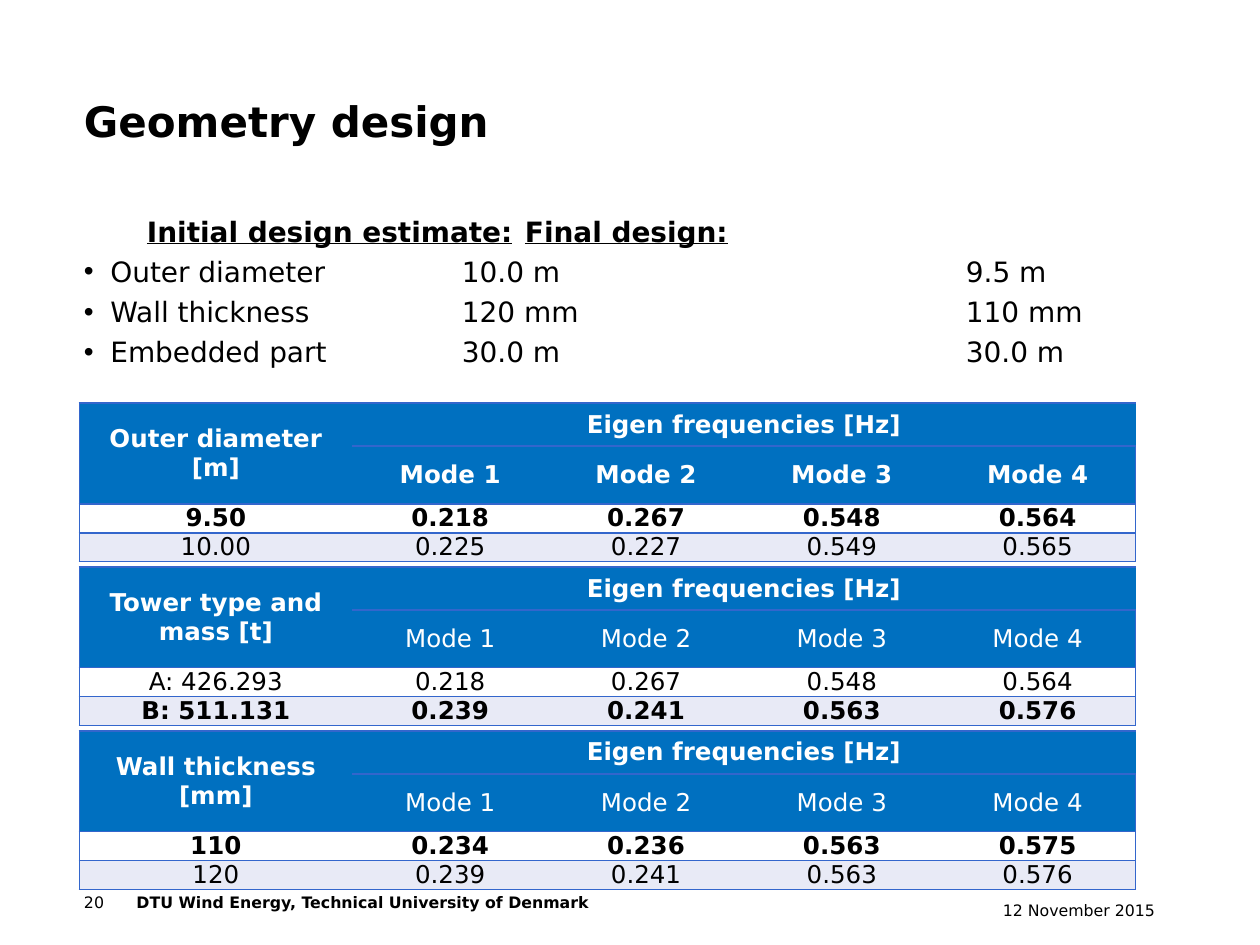
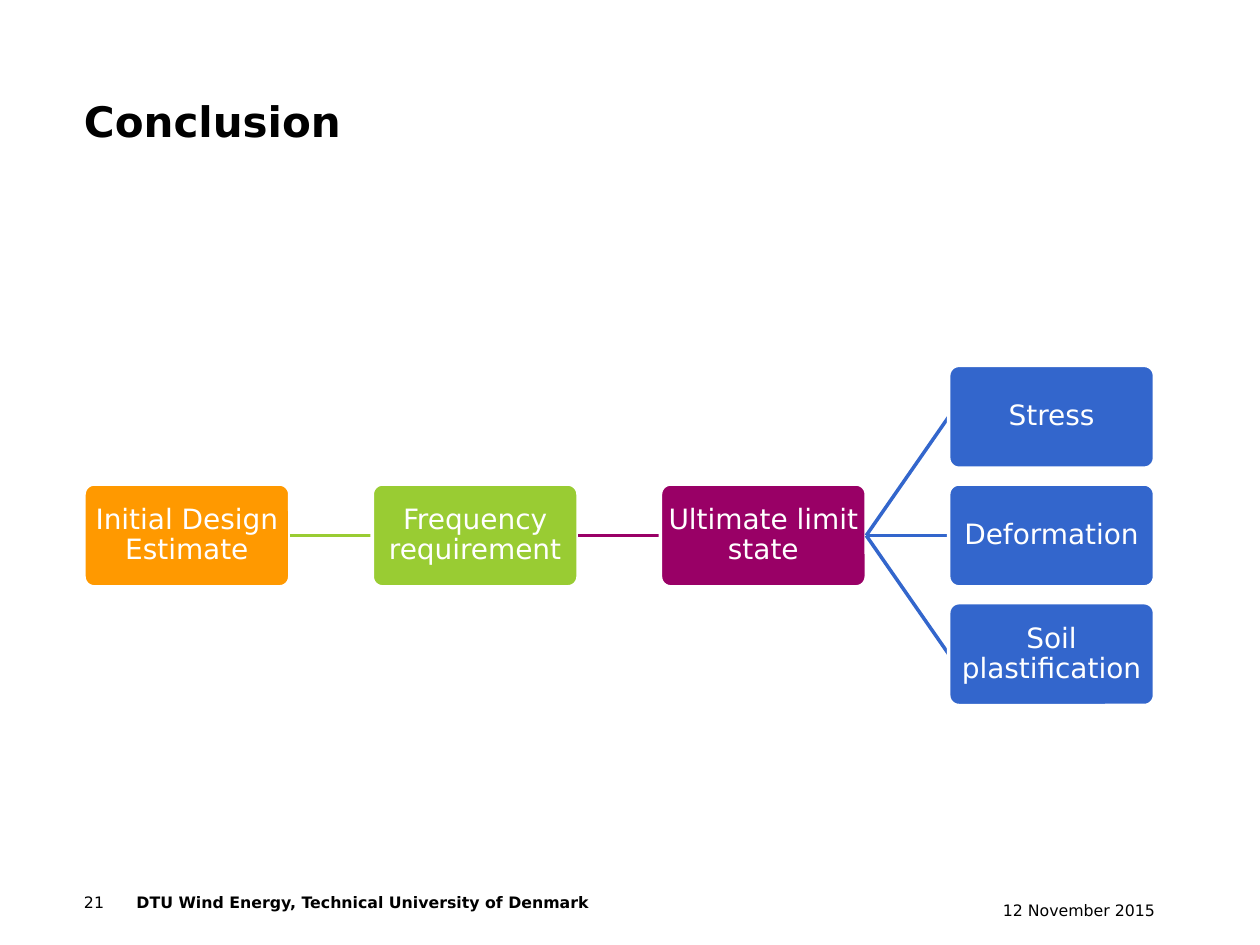
import pptx
import pptx.util
import pptx.dml.color
import pptx.enum.shapes
import pptx.enum.text
import pptx.oxml
import pptx.oxml.ns
from lxml import etree

COLORS = {"black": "000000", "white": "FFFFFF", "header": "0070C0", "band": "E8EAF6",
          "blue": "3366CC", "orange": "FF9900", "green": "99CC33", "purple": "990066"}
FONT = "DejaVu Sans"
ALIGN = pptx.enum.text.PP_ALIGN
ANCHOR = pptx.enum.text.MSO_ANCHOR
SHAPE = pptx.enum.shapes.MSO_SHAPE
Pt = pptx.util.Pt
qn = pptx.oxml.ns.qn

deck = pptx.Presentation()
deck.slide_width, deck.slide_height = pptx.util.Inches(10), pptx.util.Inches(7.5)
UNIT = deck.slide_width // 120  # the slide is a grid of 120 columns and 90 rows


def grid(*cells):
    return [pptx.util.Emu(round(cell * UNIT)) for cell in cells]


def style(frame, size, color="black", bold=False, align=ALIGN.LEFT, anchor=ANCHOR.TOP, inset=0):
    """Format every run of a text frame and lay the text out inside its box."""
    frame.word_wrap = True
    frame.auto_size = pptx.enum.text.MSO_AUTO_SIZE.NONE
    frame.vertical_anchor = anchor
    frame.margin_left = frame.margin_right = frame.margin_top = frame.margin_bottom = Pt(inset)
    for paragraph in frame.paragraphs:
        paragraph.alignment = align
        for span in paragraph.runs:
            span.font.name, span.font.size, span.font.bold = FONT, Pt(size), bold
            span.font.color.rgb = pptx.dml.color.RGBColor.from_string(COLORS[color])


# Title and footer of both slides
LEFT, WIDTH = 8, 102
pages = []
for number, layout, heading in [(20, 1, "Geometry design"), (21, 5, "Conclusion")]:
    page = deck.slides.add_slide(deck.slide_layouts[layout])
    pages.append(page)
    title = page.shapes.title
    title.left, title.top, title.width, title.height = grid(LEFT, 4, WIDTH, 15)
    title.text_frame.text = heading
    style(title.text_frame, 24, bold=True, anchor=ANCHOR.MIDDLE)
    for text, place, bold, align in [
        ("DTU Wind Energy, Technical University of Denmark", (13, 85, 55.5, 4), True, ALIGN.LEFT),
        (str(number), (LEFT, 85, 4, 4), False, ALIGN.LEFT),
        ("12 November 2015", (93, 85.8, 17, 3), False, ALIGN.RIGHT),
    ]:
        box = page.shapes.add_textbox(*grid(*place))
        box.text_frame.text = text
        style(box.text_frame, 9, bold=bold, align=align)
geometry, conclusion = pages

# Design values, lined up with tab stops
body = geometry.placeholders[1]
body.left, body.top, body.width, body.height = grid(LEFT, 20.4, WIDTH, 60)
design_rows = [
    ["", "Initial design estimate:", "Final design:"],
    ["Outer diameter", "10.0 m", "9.5 m"],
    ["Wall thickness", "120 mm", "110 mm"],
    ["Embedded part", "30.0 m", "30.0 m"],
]
body.text_frame.text = "\n".join("\t".join(row) for row in design_rows)
for index, paragraph in enumerate(body.text_frame.paragraphs):
    is_heading = index == 0
    hang = grid(0 if is_heading else 2.52)[0]
    properties = paragraph._p.get_or_add_pPr()
    properties.set("marL", str(hang))
    properties.set("indent", str(-hang))
    if is_heading:
        etree.SubElement(properties, qn("a:buNone"))
    else:
        etree.SubElement(properties, qn("a:buChar"), char="•")
    tabs = etree.SubElement(properties, qn("a:tabLst"))
    for stop in grid(*((19.4, 72) if is_heading else (36, 84))):
        etree.SubElement(tabs, qn("a:tab"), pos=str(stop), algn="l")
    paragraph.space_before = Pt(0 if is_heading else 3.8)
first = body.text_frame.paragraphs[0]
first.text = ""
for text in ("\t", design_rows[0][1], "\t", design_rows[0][2]):
    first.add_run().text = text
style(body.text_frame, 16)
for span in first.runs[1::2]:
    span.font.bold = span.font.underline = True

# Eigen frequency tables
MODES = [f"Mode {mode}" for mode in range(1, 5)]
COLUMN_WIDTHS = [26] + [18.65] * 4
ROW_HEIGHTS = [4.1, 5.5, 2.75, 2.75]
ROW_FILLS = ["header", "header", "white", "band"]
frequency_tables = [
    ("Outer diameter [m]", [True, True, True, False],
     ["9.50", "0.218", "0.267", "0.548", "0.564"],
     ["10.00", "0.225", "0.227", "0.549", "0.565"]),
    ("Tower type and mass [t]", [True, False, False, True],
     ["A: 426.293", "0.218", "0.267", "0.548", "0.564"],
     ["B: 511.131", "0.239", "0.241", "0.563", "0.576"]),
    ("Wall thickness [mm]", [True, False, True, False],
     ["110", "0.234", "0.236", "0.563", "0.575"],
     ["120", "0.239", "0.241", "0.563", "0.576"]),
]
for index, (parameter, bold_rows, *values) in enumerate(frequency_tables):
    place = grid(7.56, 38.4 + 15.6 * index, sum(COLUMN_WIDTHS), sum(ROW_HEIGHTS))
    table = geometry.shapes.add_table(4, 5, *place).table
    for column, width in zip(table.columns, grid(*COLUMN_WIDTHS)):
        column.width = width
    for row, height in zip(table.rows, grid(*ROW_HEIGHTS)):
        row.height = height
    table.cell(0, 0).merge(table.cell(1, 0))
    table.cell(0, 1).merge(table.cell(0, 4))
    texts = [[parameter, "Eigen frequencies [Hz]", "", "", ""], ["", *MODES], *values]
    for r, row in enumerate(texts):
        for c, text in enumerate(row):
            cell = table.cell(r, c)
            properties = cell._tc.get_or_add_tcPr()
            sides = {"L": c == 0, "R": c == 4, "T": (r, c) != (1, 0), "B": (r, c) != (0, 0)}
            for side, visible in sides.items():
                border = etree.SubElement(properties, qn(f"a:ln{side}"), w=str(Pt(1)))
                if visible:
                    fill = etree.SubElement(border, qn("a:solidFill"))
                    etree.SubElement(fill, qn("a:srgbClr"), val=COLORS["blue"])
                else:
                    etree.SubElement(border, qn("a:noFill"))
            cell.fill.solid()
            cell.fill.fore_color.rgb = pptx.dml.color.RGBColor.from_string(COLORS[ROW_FILLS[r]])
            cell.margin_left = cell.margin_right = Pt(5)
            cell.margin_top = cell.margin_bottom = 0
            cell.vertical_anchor = ANCHOR.MIDDLE
            if text:
                cell.text_frame.text = text
                paragraph = cell.text_frame.paragraphs[0]
                paragraph.alignment = ALIGN.CENTER
                font = paragraph.runs[0].font
                font.name, font.size, font.bold = FONT, Pt(14), bold_rows[r]
                color = COLORS["white" if r < 2 else "black"]
                font.color.rgb = pptx.dml.color.RGBColor.from_string(color)

# Design steps: text, column, row, colour, preceding step
STEP_WIDTH, STEP_HEIGHT = 19.6, 9.8
steps = [
    ("Initial Design Estimate", 0, 1, "orange", None),
    ("Frequency requirement", 1, 1, "green", "Initial Design Estimate"),
    ("Ultimate limit state", 2, 1, "purple", "Frequency requirement"),
    ("Stress", 3, 0, "blue", "Ultimate limit state"),
    ("Deformation", 3, 1, "blue", "Ultimate limit state"),
    ("Soil plastification", 3, 2, "blue", "Ultimate limit state"),
]
boxes = {}
for text, column, row, color, previous in steps:
    rgb = pptx.dml.color.RGBColor.from_string(COLORS[color])
    if previous:
        link = conclusion.shapes.add_connector(pptx.enum.shapes.MSO_CONNECTOR.STRAIGHT, 0, 0, 0, 0)
        link.line.color.rgb = rgb
        link.line.width = Pt(2)
        etree.SubElement(link._element.spPr, qn("a:effectLst"))
    place = grid(LEFT + 27.45 * column, 34.8 + 11.3 * row, STEP_WIDTH, STEP_HEIGHT)
    box = conclusion.shapes.add_shape(SHAPE.ROUNDED_RECTANGLE, *place)
    boxes[text] = box
    box.adjustments[0] = 0.1
    box.shadow.inherit = False
    box.fill.solid()
    box.fill.fore_color.rgb = rgb
    box.line.color.rgb = pptx.dml.color.RGBColor.from_string(COLORS["white"])
    box.line.width = Pt(2)
    box.text_frame.text = text
    box.text_frame.paragraphs[0].line_spacing = 0.9
    style(box.text_frame, 16, "white", align=ALIGN.CENTER, anchor=ANCHOR.MIDDLE, inset=1)
    if previous:
        link.begin_connect(boxes[previous], 3)
        link.end_connect(box, 1)

deck.save("out.pptx")
